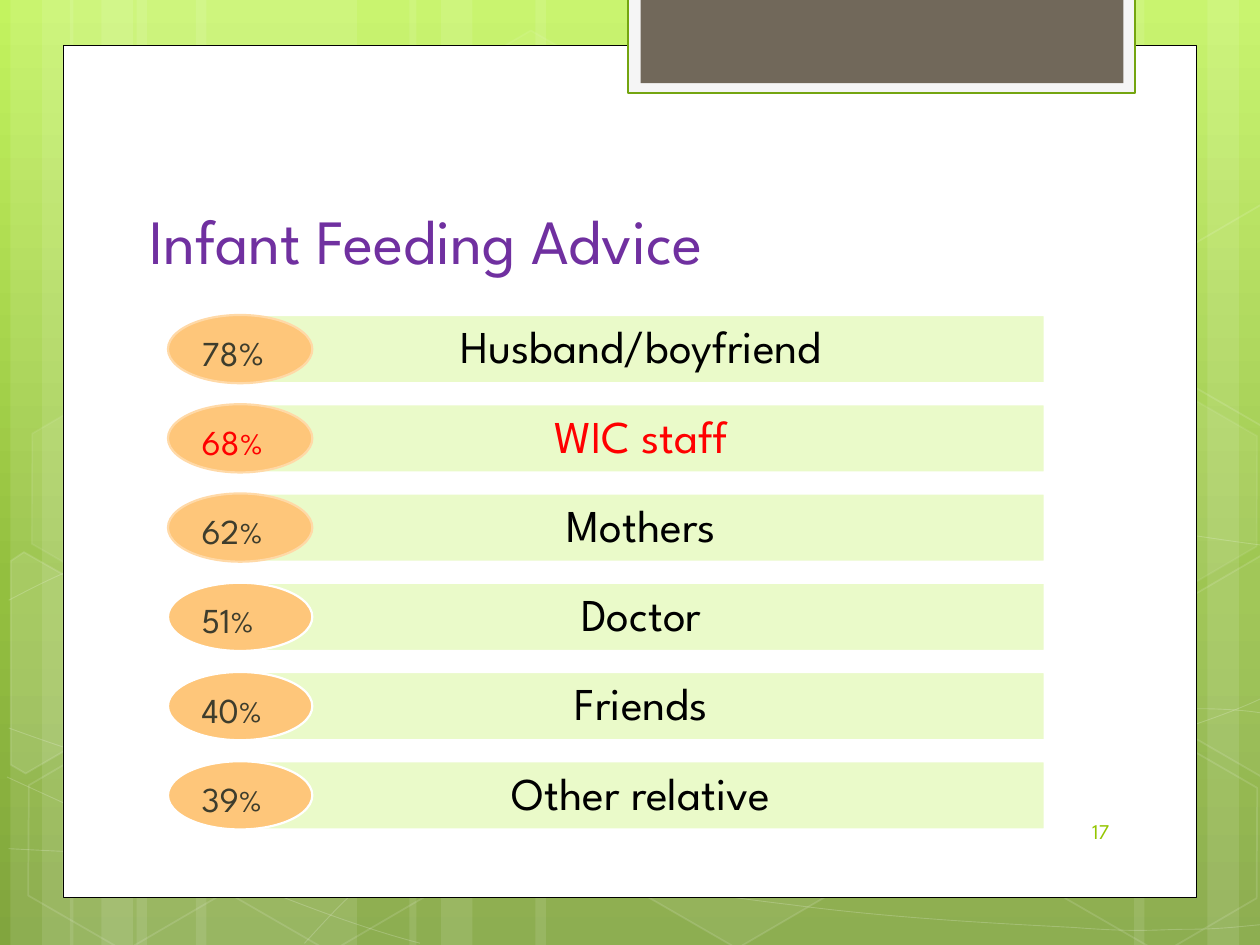
import math

import pptx
import pptx.util
import pptx.dml.color
import pptx.enum.shapes
import pptx.enum.text
import pptx.oxml
import pptx.oxml.ns

Pt = pptx.util.Pt
RGB = pptx.dml.color.RGBColor
SHAPE = pptx.enum.shapes.MSO_SHAPE
ANCHOR = pptx.enum.text.MSO_ANCHOR
ALIGN = pptx.enum.text.PP_ALIGN
FONT = "League Spartan"
TILT = 30  # degrees, for every hexagon

WHITE, BLACK, RED = RGB(255, 255, 255), RGB(0, 0, 0), RGB(255, 0, 0)
PURPLE = RGB(0x70, 0x30, 0xA0)
TAB_EDGE, TAB_GREY, TAB_BROWN = RGB(0x74, 0xA5, 0x10), RGB(0xF5, 0xF5, 0xF5), RGB(0x71, 0x68, 0x5A)
BAR_GREEN, OVAL_ORANGE, OVAL_EDGE = RGB(0xEA, 0xFA, 0xC9), RGB(0xFE, 0xC6, 0x7A), RGB(0xFF, 0xD9, 0xA7)
OLIVE, NUMBER_GREEN = RGB(0x3E, 0x3D, 0x2D), RGB(0x94, 0xC6, 0x00)
SKY = [(0, RGB(0xC3, 0xF3, 0x5F)), (62, RGB(0x93, 0xBF, 0x3F)), (100, RGB(0x81, 0xA5, 0x3E))]

# Left edge and width of each full-height band
BANDS = [(78, 126), (6, 36), (24, 60), (112, 126), (40, 36), (58, 60),
         (528, 126), (690, 36), (648, 60), (306, 222), (234, 36), (252, 60)]
# Left, top, fill opacity (0 for none) and line opacity of each hexagon
HEXAGONS = [(240.5, 26, 4, 8), (358, 424, 6, 12), (8, 425.5, 0, 12), (10, 224.5, 7, 8),
            (125.5, 426, 0, 12), (542, 326, 10, 12), (600.5, 427, 0, 12), (600.5, 226, 7, 8)]
# Hexagons cut off by the page edge: corners, centre of turning, fill and line opacity
RIGHT_CUT = [(667, 349), (721, 317.5), (726.5, 321), (726.5, 441.5), (721.5, 444), (667, 412.5)]
CUT_HEXAGONS = [
    ([(6, 320.5), (13.5, 315.5), (69, 347), (68.5, 410.5), (14.5, 442), (6, 437)],
     (26, 385), 10, 12),
    (RIGHT_CUT, (709, 374.5), 4, 12),
    ([(x, y - 200.5) for x, y in RIGHT_CUT], (709, 174), 0, 12)]
# Bezier curves: a start, then two controls and an end for each part
CURVES = [
    [(5, 485), (44, 487), (83, 489), (137, 488), (191, 487), (258, 486), (330, 479),
     (402, 472), (504, 458), (570, 444), (636, 431), (703, 409), (725, 397)],
    [(5, 343), (26, 332), (47, 321), (87, 310), (128, 300), (186, 284), (250, 279),
     (314, 274), (392, 273), (471, 279), (550, 284), (682, 307), (725, 312)],
    [(4, 444), (91, 484), (178, 523), (240, 539)],
    [(5, 416), (27, 424), (50, 432), (92, 444), (134, 454), (197, 472), (257, 485),
     (317, 497), (392, 510), (452, 517), (512, 525), (576, 528), (614, 530),
     (652, 533), (662, 531), (680, 531), (699, 531), (712, 529), (725, 528)],
    [(174, 539), (187, 525), (200, 510), (217, 498), (235, 485), (259, 470), (279, 460),
     (300, 450), (312, 446), (338, 438), (364, 431), (413, 421), (438, 416),
     (464, 411), (467, 411), (490, 410), (512, 408), (547, 405), (572, 405),
     (597, 404), (638, 405), (638, 405), (654, 405), (670, 405), (686, 405),
     (699, 405), (711, 406), (718, 407), (724, 408), (722, 407), (724, 408)]]

# Label, number, size of the percent sign, text colours and oval edge
ADVISERS = [("Husband/boyfriend", "78", 20, BLACK, OLIVE, OVAL_EDGE),
            ("WIC staff", "68", 18, RED, RED, OVAL_EDGE),
            ("Mothers", "62", 18, BLACK, OLIVE, OVAL_EDGE),
            ("Doctor", "51", 18, BLACK, OLIVE, WHITE),
            ("Friends", "40", 18, BLACK, OLIVE, WHITE),
            ("Other relative", "39", 18, BLACK, OLIVE, WHITE)]


def set_opacity(shape, where, percent):
    for color in shape.element.xpath(f"./p:spPr/{where}a:solidFill/a:srgbClr"):
        color.append(pptx.oxml.parse_xml(
            f'<a:alpha {pptx.oxml.ns.nsdecls("a")} val="{percent * 1000}"/>'))


def paint(shape, fill=None, line=None, width=1.0, fill_opacity=100, line_opacity=100):
    shape.shadow.inherit = False
    if fill is None:
        shape.fill.background()
    else:
        shape.fill.solid()
        shape.fill.fore_color.rgb = fill
    if line is None:
        shape.line.fill.background()
    else:
        shape.line.color.rgb = line
        shape.line.width = Pt(width)
    if fill_opacity < 100:
        set_opacity(shape, "", fill_opacity)
    if line_opacity < 100:
        set_opacity(shape, "a:ln/", line_opacity)


def add_preset(page, kind, left, top, width, height):
    return page.shapes.add_shape(kind, Pt(left), Pt(top), Pt(width), Pt(height))


def add_outline(page, points, close=True):
    start, *rest = [(Pt(x), Pt(y)) for x, y in points]
    builder = page.shapes.build_freeform(*start)
    builder.add_line_segments(rest, close=close)
    return builder.convert_to_shape()


def add_curve(page, nodes):
    curve = add_outline(page, nodes, close=False)
    # Join every three line segments into one Bezier segment
    lines = curve.element.xpath(".//a:lnTo")
    for first in range(0, len(lines), 3):
        bezier = pptx.oxml.parse_xml(f'<a:cubicBezTo {pptx.oxml.ns.nsdecls("a")}/>')
        lines[first].addprevious(bezier)
        for line in lines[first:first + 3]:
            bezier.append(line[0])
            line.getparent().remove(line)
    return curve


def turn_back(points, center):
    cos, sin = math.cos(math.radians(TILT)), math.sin(math.radians(TILT))
    cx, cy = center
    return [(cx + (x - cx) * cos + (y - cy) * sin, cy - (x - cx) * sin + (y - cy) * cos)
            for x, y in points]


def format_paragraph(para, size, color, align):
    para.alignment = align
    para.font.name = FONT
    para.font.size = Pt(size)
    para.font.color.rgb = color


def draw_backdrop(page, top, height):
    # Vertical gradient
    fill = page.background.fill
    fill.gradient()
    fill.gradient_angle = 270
    stops = page.element.xpath(".//p:bg//a:gsLst")[0]
    for stop in list(stops):
        stops.remove(stop)
    for position, color in SKY:
        stops.append(pptx.oxml.parse_xml(
            f'<a:gs {pptx.oxml.ns.nsdecls("a")} pos="{position * 1000}">'
            f'<a:srgbClr val="{color}"/></a:gs>'))
    for left, width in BANDS:
        paint(add_preset(page, SHAPE.RECTANGLE, left, top, width, height), WHITE, fill_opacity=10)
    for nodes in CURVES:
        paint(add_curve(page, nodes), line=WHITE, width=0.5, line_opacity=20)
    for left, hex_top, opacity, edge in HEXAGONS:
        hexagon = add_preset(page, SHAPE.HEXAGON, left, hex_top, 126, 109.5)
        hexagon.adjustments[0] = 0.285
        hexagon.rotation = TILT
        paint(hexagon, WHITE if opacity else None, WHITE, 1, opacity, edge)
    for corners, center, opacity, edge in CUT_HEXAGONS:
        hexagon = add_outline(page, turn_back(corners, center))
        hexagon.rotation = TILT
        paint(hexagon, WHITE if opacity else None, WHITE, 1, opacity, edge)


def draw_panel(page, left, top, width, height):
    paint(add_preset(page, SHAPE.RECTANGLE, left, top, width, height), WHITE, BLACK, 0.5)
    # Tab hanging from the top edge
    tab_left = left + 323
    paint(add_preset(page, SHAPE.RECTANGLE, tab_left, -1.5, 289.5, 54.5), TAB_GREY, TAB_EDGE, 1.25)
    paint(add_preset(page, SHAPE.RECTANGLE, tab_left + 7, -1.5, 276, 49), TAB_BROWN)


def place_title(page, text, left, top, width, height):
    title = page.shapes.title
    title.element.getparent().append(title.element)  # in front of the panel
    title.left, title.top, title.width, title.height = Pt(left), Pt(top), Pt(width), Pt(height)
    title.text_frame.text = text
    title.text_frame.vertical_anchor = ANCHOR.BOTTOM
    format_paragraph(title.text_frame.paragraphs[0], 36, PURPLE, ALIGN.LEFT)


def draw_advisers(page, left, top, width, row_height, pitch):
    bar_left, right, notch = left + 25, left + width, 24.5
    for index, (label, number, sign_size, color, number_color, edge) in enumerate(ADVISERS):
        y = top + index * pitch
        bottom = y + row_height
        # Bar with a pointed left end
        bar = add_outline(page, [(right, bottom), (bar_left + notch, bottom),
                                 (bar_left, y + row_height / 2), (bar_left + notch, y), (right, y)])
        paint(bar, BAR_GREEN, WHITE, 1.25)
        frame = bar.text_frame
        frame.word_wrap = True
        frame.vertical_anchor = ANCHOR.MIDDLE
        frame.margin_left, frame.margin_right = Pt(29.5), Pt(14.5)
        frame.margin_top = frame.margin_bottom = Pt(8)
        frame.text = label
        format_paragraph(frame.paragraphs[0], 26, color, ALIGN.CENTER)
        frame.paragraphs[0].line_spacing = 0.9
        # Oval with the share
        oval = add_preset(page, SHAPE.OVAL, left, y, 82.5, row_height)
        paint(oval, OVAL_ORANGE, edge, 1.25)
        oval.text_frame.vertical_anchor = ANCHOR.TOP
        para = oval.text_frame.paragraphs[0]
        format_paragraph(para, 20, number_color, ALIGN.LEFT)
        para.add_run().text = number
        sign = para.add_run()
        sign.text = "%"
        sign.font.size = Pt(sign_size)


def place_page_number(page, text, left, top, width, height):
    box = page.shapes.add_textbox(Pt(left), Pt(top), Pt(width), Pt(height))
    box.text_frame.word_wrap = True
    box.text_frame.vertical_anchor = ANCHOR.MIDDLE
    box.text_frame.text = text
    format_paragraph(box.text_frame.paragraphs[0], 12, NUMBER_GREEN, ALIGN.RIGHT)


deck = pptx.Presentation()
deck.slide_width, deck.slide_height = Pt(720), Pt(540)
page = deck.slides.add_slide(deck.slide_layouts[5])
draw_backdrop(page, 0, 540)
draw_panel(page, 36, 26, 648, 487)
place_title(page, "Infant Feeding Advice", 78, 80.5, 557, 81.5)
draw_advisers(page, 96, 180, 501, 39, 51)
place_page_number(page, "17", 366, 460.5, 275, 29)
deck.save("out.pptx")
